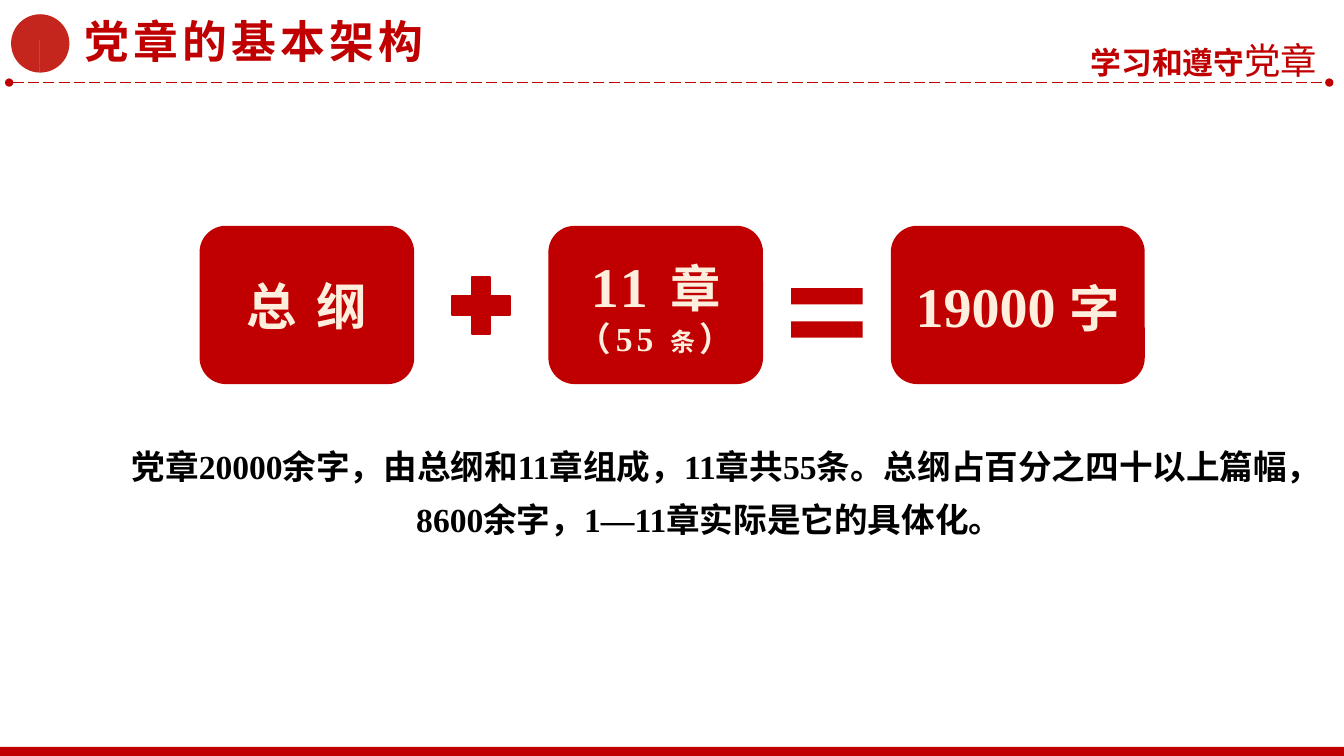
from dataclasses import dataclass

from lxml.etree import SubElement
from pptx import Presentation
from pptx.dml.color import RGBColor
from pptx.enum.dml import MSO_LINE
from pptx.enum.shapes import MSO_CONNECTOR, MSO_SHAPE
from pptx.enum.text import MSO_ANCHOR, MSO_AUTO_SIZE, PP_ALIGN
from pptx.oxml.ns import qn
from pptx.util import Cm, Pt


@dataclass(frozen=True)
class Theme:
    red: str = "C00000"
    badge: str = "C4261D"
    cream: str = "FEEEDE"
    white: str = "FFFFFF"
    black: str = "000000"
    latin: str = "Times New Roman"
    chinese: str = "Noto Sans CJK SC"
    title: int = 32
    body: int = 24
    number: int = 40
    word: int = 36
    detail: int = 24
    unit: int = 18
    motto: int = 22
    motto_end: int = 26


THEME = Theme()

# Each paragraph is a list of (text, size) runs
TITLE = [[("党章的基本架构", THEME.title)]]
MOTTO = [("学习和遵守", THEME.motto, True), ("党章", THEME.motto_end, False)]
SUMMARY = [[("党章20000余字，由总纲和11章组成，11章共55条。总纲占百分之四十以上篇幅，"
             "8600余字，1—11章实际是它的具体化。", THEME.body)]]
# left, width, letter spacing, paragraphs
BOXES = [
    (5.03, 5.41, 3, [[("总 纲", THEME.word)]]),
    (13.82, 5.41, 3, [
        [("11 ", THEME.number), ("章", THEME.word)],
        [("（55 ", THEME.detail), ("条", THEME.unit), ("）", THEME.detail)],
    ]),
    (22.45, 6.4, 0, [[("19000 ", THEME.number), ("字", THEME.word)]]),
]
BOX_TOP, BOX_HEIGHT = 5.69, 3.99
EQUALS_TOPS = (7.26, 8.1)

# Book icon, in centimetres
BOOK_SPINE = [(1.06, 0.58), (0.58, 0.74), (0.58, 1.37), (0.71, 1.42),
              (0.71, 0.81), (0.61, 0.76), (1.07, 0.61)]
BOOK_LABEL = [(0.58, 0.81), (0.68, 0.86), (0.68, 0.94), (0.58, 0.89)]
BOOK_COVER = [(1.02, 0.99), (1.02, 1.63), (1.47, 1.45), (1.47, 0.84)]
BOOK_STEP = (0.14, 0.09)
BOOK_COUNT = 3


def place(shape, left, top, width, height):
    shape.left, shape.top = Cm(left), Cm(top)
    shape.width, shape.height = Cm(width), Cm(height)


def write_text(frame, paragraphs, color=THEME.red, latin=THEME.latin, align=PP_ALIGN.LEFT,
               anchor=MSO_ANCHOR.TOP, wrap=True, spacing=0, line_spacing=None,
               auto_size=MSO_AUTO_SIZE.NONE):
    """Fill a frame; a run may carry a third item that says whether it is bold."""
    frame.word_wrap = wrap
    frame.auto_size = auto_size
    frame.vertical_anchor = anchor
    for index, runs in enumerate(paragraphs):
        paragraph = frame.add_paragraph() if index else frame.paragraphs[0]
        paragraph.alignment = align
        if line_spacing:
            paragraph.line_spacing = line_spacing
        for text, size, *bold in runs:
            run = paragraph.add_run()
            run.text = text
            run.font.size = Pt(size)
            run.font.bold = bold[0] if bold else True
            run.font.name = latin
            run.font.color.rgb = RGBColor.from_string(color)
            properties = run._r.get_or_add_rPr()
            SubElement(properties, qn("a:ea")).set("typeface", THEME.chinese)
            if spacing:
                properties.set("spc", str(spacing * 100))


def paint(shape, color):
    shape.shadow.inherit = False
    shape.fill.solid()
    shape.fill.fore_color.rgb = RGBColor.from_string(color)
    shape.line.fill.background()


def add_filled(slide, kind, left, top, width, height, color=THEME.red):
    shape = slide.shapes.add_shape(kind, Cm(left), Cm(top), Cm(width), Cm(height))
    paint(shape, color)
    return shape


def add_text(slide, left, top, width, height, paragraphs, **text_format):
    box = slide.shapes.add_textbox(Cm(left), Cm(top), Cm(width), Cm(height))
    write_text(box.text_frame, paragraphs, **text_format)


def add_books(slide):
    contours = [BOOK_COVER]
    for book in range(BOOK_COUNT):
        for outline in (BOOK_SPINE, BOOK_LABEL):
            contours.append([(x + book * BOOK_STEP[0], y + book * BOOK_STEP[1])
                             for x, y in outline])
    builder = slide.shapes.build_freeform(*contours[0][0], scale=Cm(1))
    for index, contour in enumerate(contours):
        if index:
            builder.move_to(*contour[0])
        builder.add_line_segments(contour[1:], close=True)
    paint(builder.convert_to_shape(), THEME.white)


def add_header_line(slide):
    connector = slide.shapes.add_connector(
        MSO_CONNECTOR.STRAIGHT, Cm(0.23), Cm(2.08), Cm(33.5), Cm(2.08))
    connector.line.color.rgb = RGBColor.from_string(THEME.red)
    connector.line.width = Pt(1)
    connector.line.dash_style = MSO_LINE.LONG_DASH
    line = connector.line._get_or_add_ln()
    for end in ("a:headEnd", "a:tailEnd"):
        SubElement(line, qn(end)).set("type", "oval")
    SubElement(connector._element.spPr, qn("a:effectLst"))


def add_header(slide):
    add_header_line(slide)
    add_text(slide, 26.92, 0.84, 6.53, 1.37, [MOTTO], latin=THEME.chinese,
             align=PP_ALIGN.RIGHT, wrap=False, auto_size=MSO_AUTO_SIZE.SHAPE_TO_FIT_TEXT)
    add_filled(slide, MSO_SHAPE.OVAL, 0.28, 0.36, 1.47, 1.47, THEME.badge)
    add_books(slide)
    title = slide.shapes.title
    place(title, 1.88, 0.23, 9.25, 1.63)
    write_text(title.text_frame, TITLE, spacing=3, wrap=False,
               auto_size=MSO_AUTO_SIZE.SHAPE_TO_FIT_TEXT)


def add_equation(slide):
    for left, width, spacing, paragraphs in BOXES:
        box = add_filled(slide, MSO_SHAPE.ROUNDED_RECTANGLE, left, BOX_TOP, width, BOX_HEIGHT)
        write_text(box.text_frame, paragraphs, color=THEME.cream, align=PP_ALIGN.CENTER,
                   anchor=MSO_ANCHOR.MIDDLE, spacing=spacing)
    plus = add_filled(slide, MSO_SHAPE.MATH_PLUS, 11.13, 6.71, 1.98, 1.98)
    plus.line.color.rgb = RGBColor.from_string(THEME.red)
    plus.line.width = Pt(1.5)
    for top in EQUALS_TOPS:
        add_filled(slide, MSO_SHAPE.RECTANGLE, 19.94, top, 1.8, 0.41)


def main():
    presentation = Presentation()
    presentation.slide_width, presentation.slide_height = Cm(33.87), Cm(19.05)
    slide = presentation.slides.add_slide(presentation.slide_layouts[5])
    add_header(slide)
    add_equation(slide)
    add_text(slide, 2.95, 10.82, 29.85, 2.92, SUMMARY, color=THEME.black,
             align=PP_ALIGN.CENTER, line_spacing=1.3,
             auto_size=MSO_AUTO_SIZE.SHAPE_TO_FIT_TEXT)
    add_filled(slide, MSO_SHAPE.RECTANGLE, 0, 18.82, 33.87, 0.23)
    presentation.save("out.pptx")


if __name__ == "__main__":
    main()
